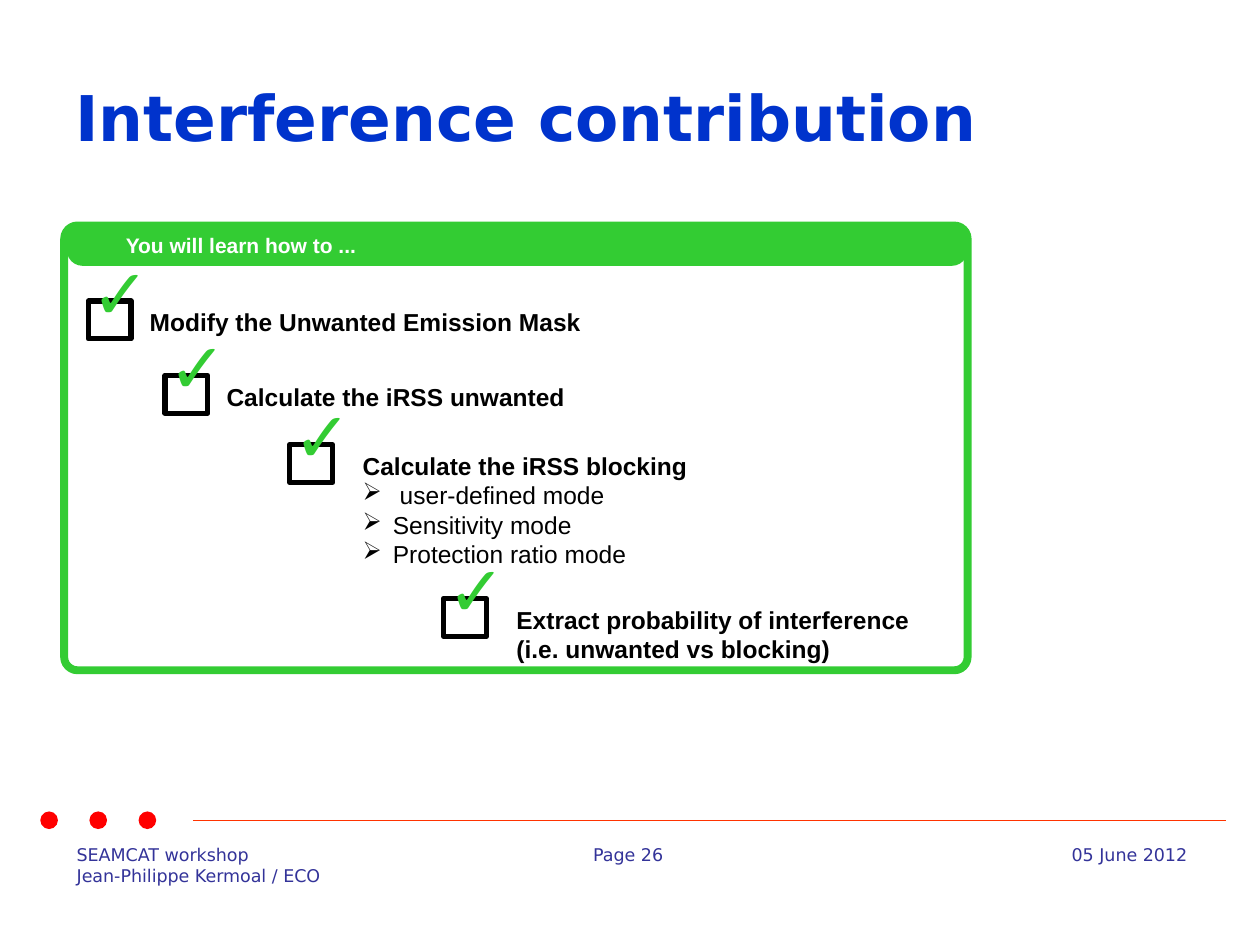
from dataclasses import dataclass

from lxml import etree
from pptx import Presentation
from pptx.dml.color import RGBColor
from pptx.enum.shapes import MSO_CONNECTOR as Connector, MSO_SHAPE as Shape
from pptx.enum.text import MSO_ANCHOR as Anchor, PP_ALIGN as Align
from pptx.oxml.ns import qn
from pptx.util import Inches, Pt


@dataclass(frozen=True)
class Theme:
    heading_font: str = "DejaVu Sans"
    body_font: str = "Arial"
    title_blue: str = "0033CC"
    footer_blue: str = "333399"
    green: str = "33CC33"
    red: str = "FF0000"
    rule_red: str = "FF3300"
    black: str = "000000"
    white: str = "FFFFFF"
    title_size: float = 36
    check_size: float = 40
    item_size: float = 14
    header_size: float = 12
    footer_size: float = 10


def color(value):
    return RGBColor.from_string(value)


class SlideBuilder:
    def __init__(self, slide, theme):
        self.slide = slide
        self.theme = theme

    def text(self, box, lines, size, ink, font=None, bold=False, wrap=True,
             align=Align.LEFT, anchor=Anchor.TOP):
        shape = self.slide.shapes.add_textbox(*map(Inches, box))
        frame = shape.text_frame
        frame.text = "\n".join(lines)
        frame.word_wrap = wrap
        frame.vertical_anchor = anchor
        for paragraph in frame.paragraphs:
            paragraph.alignment = align
            for run in paragraph.runs:
                run.font.name = font or self.theme.body_font
                run.font.size = Pt(size)
                run.font.bold = bold
                run.font.color.rgb = color(ink)
        return frame

    def footer(self, box, lines, **options):
        self.text(box, lines, self.theme.footer_size, self.theme.footer_blue,
                  self.theme.heading_font, **options)

    def shape(self, kind, box, fill=None, line=None, width=0, corner=None):
        shape = self.slide.shapes.add_shape(kind, *map(Inches, box))
        shape.shadow.inherit = False
        if corner is not None:
            shape.adjustments[0] = corner
        if fill:
            shape.fill.solid()
            shape.fill.fore_color.rgb = color(fill)
        else:
            shape.fill.background()
        if line:
            shape.line.color.rgb = color(line)
            shape.line.width = Pt(width)
        else:
            shape.line.fill.background()

    def rule(self, start, end, ink, width):
        connector = self.slide.shapes.add_connector(
            Connector.STRAIGHT, *map(Inches, start + end))
        connector.line.color.rgb = color(ink)
        connector.line.width = Pt(width)
        etree.SubElement(connector._element.spPr, qn("a:effectLst"))

    def bullet(self, paragraph, indent=0.24):
        properties = paragraph._p.get_or_add_pPr()
        properties.set("marL", str(Inches(indent)))
        properties.set("indent", str(-Inches(indent)))
        etree.SubElement(properties, qn("a:buChar"), char="➢")
        for run in paragraph.runs:
            run.font.bold = False

    def checklist_item(self, left, top, gap, size, lines, bullets=()):
        theme = self.theme
        frame = self.text((left + gap, top, *size), [*lines, *bullets],
                          theme.item_size, theme.black, bold=True)
        for paragraph in frame.paragraphs[len(lines):]:
            self.bullet(paragraph)
        self.shape(Shape.RECTANGLE, (left, top, 0.34, 0.3),
                   line=theme.black, width=3)
        self.text((left - 0.07, top - 0.46, 0.62, 0.77), ["✓"],
                  theme.check_size, theme.green, bold=True, wrap=False)


def main():
    presentation = Presentation()
    presentation.slide_width = Inches(10)
    presentation.slide_height = Inches(7.5)
    slide = presentation.slides.add_slide(presentation.slide_layouts[6])
    theme = Theme()
    builder = SlideBuilder(slide, theme)

    # Footer with rule and dots
    builder.footer((0.51, 6.65, 2.21, 0.43),
                   ["SEAMCAT workshop", "Jean-Philippe Kermoal / ECO"], wrap=False)
    builder.footer((4.61, 6.65, 0.82, 0.27), ["Page 26"], wrap=False)
    builder.footer((7.73, 6.65, 1.79, 0.27), ["05 June 2012"], align=Align.RIGHT)
    builder.rule((1.53, 6.51), (9.73, 6.51), theme.rule_red, 0.75)
    for index in range(3):
        builder.shape(Shape.OVAL, (0.32 + 0.39 * index, 6.44, 0.14, 0.14),
                      fill=theme.red)

    # Title
    builder.text((0.5, 0.3, 9, 1.25), ["Interference contribution"],
                 theme.title_size, theme.title_blue, theme.heading_font,
                 bold=True, anchor=Anchor.MIDDLE)

    # Framed panel with header
    builder.shape(Shape.ROUNDED_RECTANGLE, (0.51, 1.79, 7.17, 3.53),
                  line=theme.green, width=4.5, corner=0.03)
    builder.shape(Shape.ROUNDED_RECTANGLE, (0.53, 1.77, 7.15, 0.34),
                  fill=theme.green, corner=0.37)
    builder.text((0.9, 1.8, 4.96, 0.3), ["You will learn how to ..."],
                 theme.header_size, theme.white, bold=True)

    # Checklist, stepping down to the right
    builder.checklist_item(0.7, 2.39, 0.39, (4.07, 0.33),
                           ["Modify the Unwanted Emission Mask"])
    builder.checklist_item(1.31, 2.98, 0.39, (5.27, 0.33),
                           ["Calculate the iRSS unwanted"])
    builder.checklist_item(2.3, 3.53, 0.48, (2.93, 1.26),
                           ["Calculate the iRSS blocking"],
                           [" user-defined mode", "Sensitivity mode",
                            "Protection ratio mode"])
    builder.checklist_item(3.52, 4.75, 0.48, (3.48, 0.57),
                           ["Extract probability of interference",
                            "(i.e. unwanted vs blocking)"])

    presentation.save("out.pptx")


if __name__ == "__main__":
    main()
